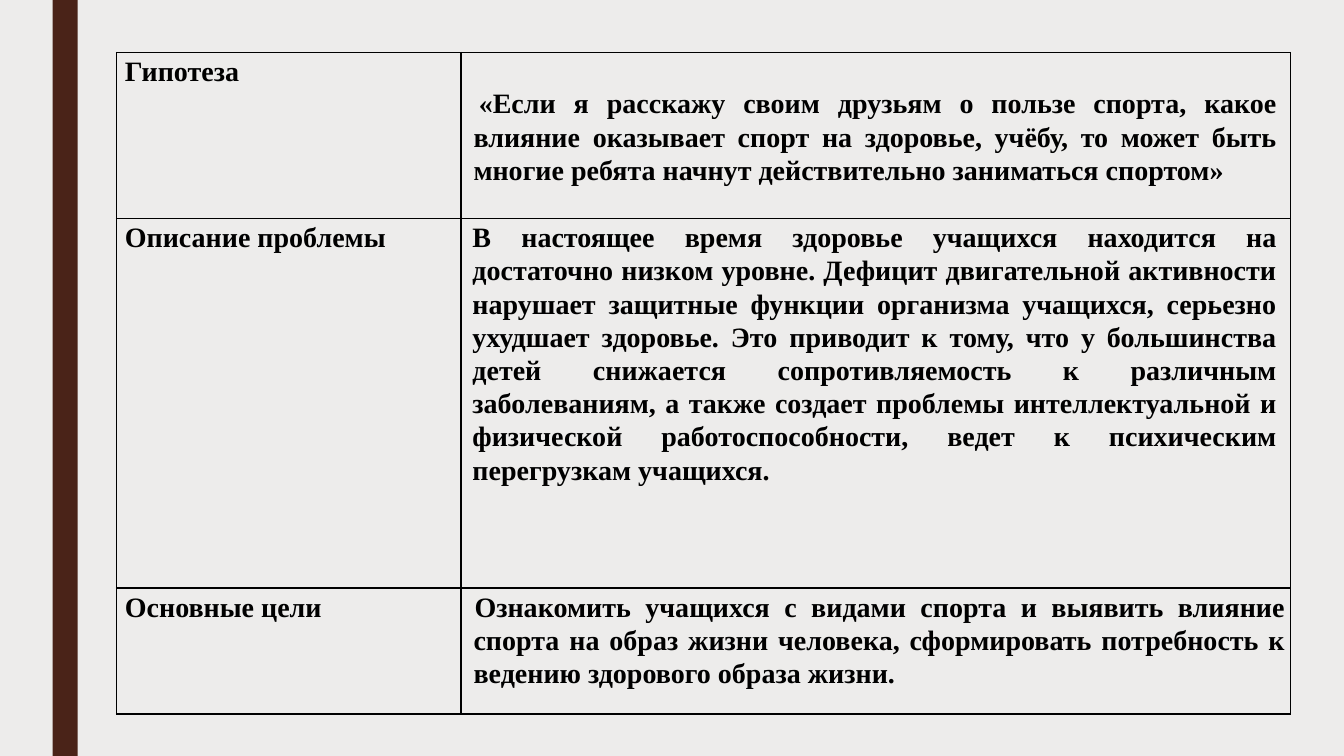
from dataclasses import dataclass

from lxml.etree import SubElement
from pptx import Presentation
from pptx.dml.color import RGBColor
from pptx.enum.shapes import MSO_SHAPE as Shape
from pptx.enum.text import MSO_ANCHOR as Anchor, PP_ALIGN as Align
from pptx.oxml.ns import qn
from pptx.slide import Slide
from pptx.table import _Cell as Cell
from pptx.util import Emu, Pt

EMU_PER_PX = 9525
FONT = "Times New Roman"
BACKGROUND = "EDECEB"
STRIPE = "4A2318"
INK = "000000"
COLUMN_WIDTHS = (328, 790)


def px(length: int) -> Emu:
    return Emu(length * EMU_PER_PX)


def color(value: str) -> RGBColor:
    return RGBColor.from_string(value)


@dataclass(frozen=True)
class CellText:
    text: str
    left: int = 1
    first_line: int = 1
    right: int = 0
    anchor: Anchor = Anchor.TOP


@dataclass(frozen=True)
class ProjectRow:
    height: int
    heading: CellText
    body: CellText


ROWS = (
    ProjectRow(
        158,
        CellText("Гипотеза"),
        CellText(
            "«Если я расскажу своим друзьям о пользе спорта, какое влияние "
            "оказывает спорт на здоровье, учёбу, то может быть многие ребята "
            "начнут действительно заниматься спортом»",
            left=6, first_line=5, right=8, anchor=Anchor.MIDDLE,
        ),
    ),
    ProjectRow(
        352,
        CellText("Описание проблемы"),
        CellText(
            "В настоящее время здоровье учащихся находится на достаточно "
            "низком уровне. Дефицит двигательной активности нарушает защитные "
            "функции организма учащихся, серьезно ухудшает здоровье. Это "
            "приводит к тому, что у большинства детей снижается "
            "сопротивляемость к различным заболеваниям, а также создает "
            "проблемы интеллектуальной и физической работоспособности, ведет "
            "к психическим перегрузкам учащихся.",
            left=5, first_line=0, right=8,
        ),
    ),
    ProjectRow(
        120,
        CellText("Основные цели"),
        CellText(
            "Ознакомить учащихся с видами спорта и выявить влияние спорта на "
            "образ жизни человека, сформировать потребность к ведению "
            "здорового образа жизни.",
            left=6,
        ),
    ),
)


def add_borders(cell: Cell) -> None:
    properties = cell._tc.get_or_add_tcPr()
    for side in ("a:lnL", "a:lnR", "a:lnT", "a:lnB"):
        line = SubElement(properties, qn(side), w=str(Pt(1)))
        fill = SubElement(line, qn("a:solidFill"))
        SubElement(fill, qn("a:srgbClr"), val=INK)


def fill_cell(cell: Cell, content: CellText) -> None:
    add_borders(cell)
    cell.fill.background()
    cell.margin_left, cell.margin_top = px(6), px(2)
    cell.margin_right, cell.margin_bottom = px(5), px(0)
    cell.vertical_anchor = content.anchor
    cell.text_frame.text = content.text
    paragraph = cell.text_frame.paragraphs[0]
    paragraph.alignment = Align.JUSTIFY
    paragraph.line_spacing = 1.07
    properties = paragraph._p.get_or_add_pPr()
    properties.set("marL", str(px(content.left)))
    properties.set("marR", str(px(content.right)))
    properties.set("indent", str(px(content.first_line)))
    font = paragraph.runs[0].font
    font.name, font.size, font.bold = FONT, Pt(20), True
    font.color.rgb = color(INK)


def add_stripe(slide: Slide) -> None:
    stripe = slide.shapes.add_shape(Shape.RECTANGLE, px(50), px(0), px(24), px(720))
    stripe.shadow.inherit = False
    stripe.fill.solid()
    stripe.fill.fore_color.rgb = color(STRIPE)
    stripe.line.fill.background()


def add_project_table(slide: Slide) -> None:
    width = sum(COLUMN_WIDTHS)
    height = sum(row.height for row in ROWS)
    table = slide.shapes.add_table(
        len(ROWS), len(COLUMN_WIDTHS), px(111), px(50), px(width), px(height)
    ).table
    table.first_row = table.horz_banding = False
    for column, column_width in zip(table.columns, COLUMN_WIDTHS):
        column.width = px(column_width)
    for table_row, row in zip(table.rows, ROWS):
        table_row.height = px(row.height)
        for cell, content in zip(table_row.cells, (row.heading, row.body)):
            fill_cell(cell, content)


def main() -> None:
    presentation = Presentation()
    presentation.slide_width, presentation.slide_height = px(1280), px(720)
    slide = presentation.slides.add_slide(presentation.slide_layouts[6])
    slide.background.fill.solid()
    slide.background.fill.fore_color.rgb = color(BACKGROUND)
    add_stripe(slide)
    add_project_table(slide)
    presentation.save("out.pptx")


if __name__ == "__main__":
    main()
